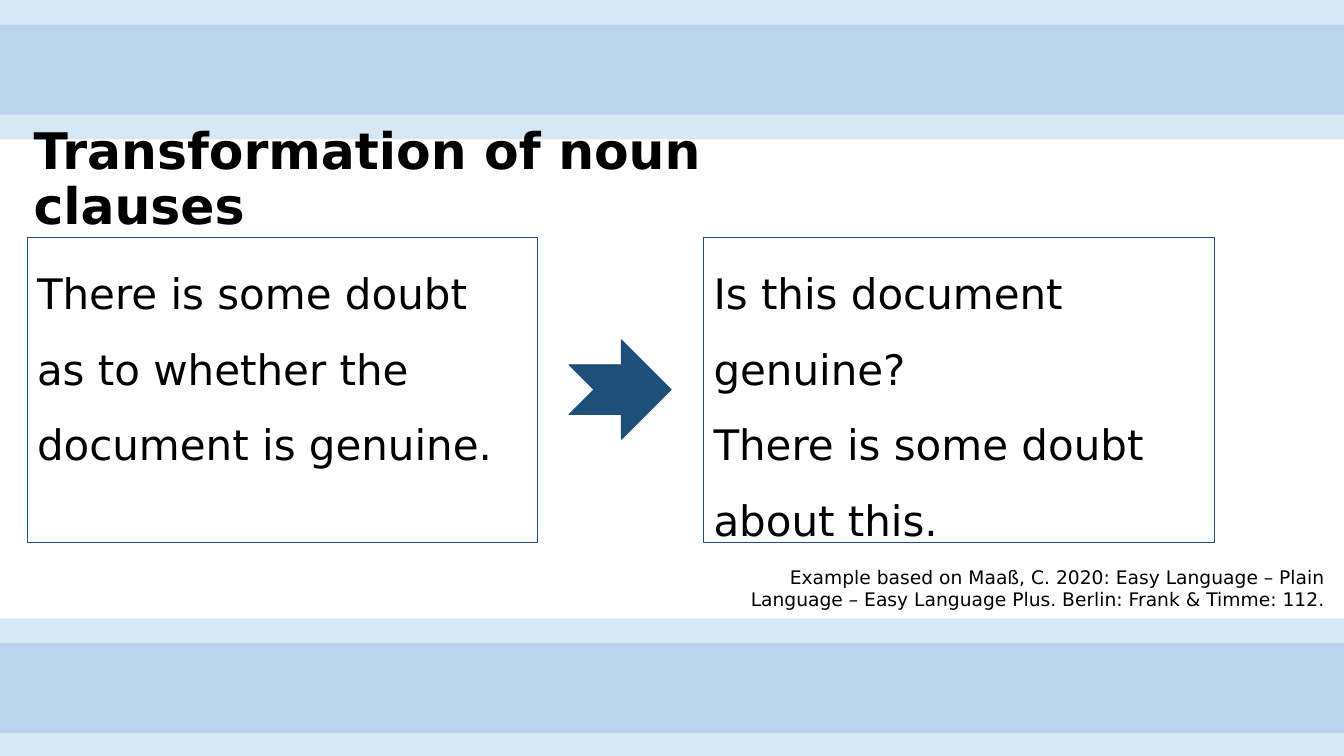
from dataclasses import dataclass

from pptx import Presentation
from pptx.dml.color import RGBColor
from pptx.enum.shapes import MSO_SHAPE
from pptx.enum.text import MSO_ANCHOR, PP_ALIGN
from pptx.oxml.ns import qn
from pptx.shapes.autoshape import Shape
from pptx.slide import Slide
from pptx.util import Cm, Pt
from lxml.etree import SubElement

BAND_BLUE = RGBColor(0x5B, 0x9B, 0xD5)
DARK_BLUE = RGBColor(0x1F, 0x4E, 0x79)
BLACK = RGBColor(0, 0, 0)
FONT = "DejaVu Sans"
SLIDE_WIDTH, SLIDE_HEIGHT = 50.8, 28.58
BAND_HEIGHT = 4.34
BAND_OPACITY = 24
BAND_TOPS = (0, 0.93, 23.38, 24.3)
CARD_TOP, CARD_WIDTH, CARD_HEIGHT = 8.97, 19.3, 11.53


@dataclass(frozen=True)
class Box:
    left: float
    top: float
    width: float
    height: float

    def lengths(self) -> tuple[Cm, Cm, Cm, Cm]:
        return Cm(self.left), Cm(self.top), Cm(self.width), Cm(self.height)


@dataclass(frozen=True)
class TextStyle:
    size: int
    line_spacing: float = 1.0
    bold: bool = False
    anchor: MSO_ANCHOR = MSO_ANCHOR.TOP
    alignment: PP_ALIGN = PP_ALIGN.LEFT


@dataclass(frozen=True)
class Card:
    left: float
    sentences: tuple[str, ...]


TITLE_STYLE = TextStyle(54, line_spacing=0.9, bold=True, anchor=MSO_ANCHOR.MIDDLE)
CARD_STYLE = TextStyle(45, line_spacing=1.5)
CITATION_STYLE = TextStyle(20, anchor=MSO_ANCHOR.BOTTOM, alignment=PP_ALIGN.RIGHT)

CARDS = (
    Card(1.02, ("There is some doubt as to whether the document is genuine.",)),
    Card(26.59, ("Is this document genuine?", "There is some doubt about this.")),
)


def write(shape: Shape, sentences: tuple[str, ...], style: TextStyle) -> None:
    frame = shape.text_frame
    frame.word_wrap = True
    frame.vertical_anchor = style.anchor
    frame.margin_left = frame.margin_right = Cm(0.38)
    frame.margin_top = frame.margin_bottom = Cm(0.19)
    frame.text = "\n".join(sentences)
    for paragraph in frame.paragraphs:
        paragraph.alignment = style.alignment
        paragraph.line_spacing = style.line_spacing
        paragraph.font.name = FONT
        paragraph.font.size = Pt(style.size)
        paragraph.font.bold = style.bold
        paragraph.font.color.rgb = BLACK


def add_band(slide: Slide, top: float) -> None:
    box = Box(0, top, SLIDE_WIDTH, BAND_HEIGHT)
    band = slide.shapes.add_shape(MSO_SHAPE.RECTANGLE, *box.lengths())
    band.shadow.inherit = False
    band.line.fill.background()
    band.fill.solid()
    band.fill.fore_color.rgb = BAND_BLUE
    color = band.fill._xPr.find(qn("a:solidFill")).find(qn("a:srgbClr"))
    SubElement(color, qn("a:alpha")).set("val", str(BAND_OPACITY * 1000))


def add_card(slide: Slide, card: Card) -> None:
    box = Box(card.left, CARD_TOP, CARD_WIDTH, CARD_HEIGHT)
    frame = slide.shapes.add_shape(MSO_SHAPE.RECTANGLE, *box.lengths())
    frame.shadow.inherit = False
    frame.fill.background()
    frame.line.color.rgb = DARK_BLUE
    frame.line.width = Pt(0.75)
    write(frame, card.sentences, CARD_STYLE)


def add_arrow(slide: Slide, box: Box) -> None:
    arrow = slide.shapes.add_shape(MSO_SHAPE.NOTCHED_RIGHT_ARROW, *box.lengths())
    arrow.shadow.inherit = False
    arrow.fill.solid()
    arrow.fill.fore_color.rgb = DARK_BLUE
    arrow.line.color.rgb = DARK_BLUE
    arrow.line.width = Pt(1)


def add_text(slide: Slide, box: Box, text: str, style: TextStyle) -> None:
    write(slide.shapes.add_textbox(*box.lengths()), (text,), style)


def main() -> None:
    presentation = Presentation()
    presentation.slide_width = Cm(SLIDE_WIDTH)
    presentation.slide_height = Cm(SLIDE_HEIGHT)
    slide = presentation.slides.add_slide(presentation.slide_layouts[6])

    for top in BAND_TOPS:
        add_band(slide, top)
    add_text(slide, Box(0.89, 5.36, 33.81, 2.95),
             "Transformation of noun clauses", TITLE_STYLE)
    for card in CARDS:
        add_card(slide, card)
    add_arrow(slide, Box(21.51, 12.85, 3.86, 3.76))
    add_text(slide, Box(27.36, 21.18, 23.09, 2.08),
             "Example based on Maaß, C. 2020: Easy Language – Plain Language – "
             "Easy Language Plus. Berlin: Frank & Timme: 112.", CITATION_STYLE)

    presentation.save("out.pptx")


if __name__ == "__main__":
    main()
